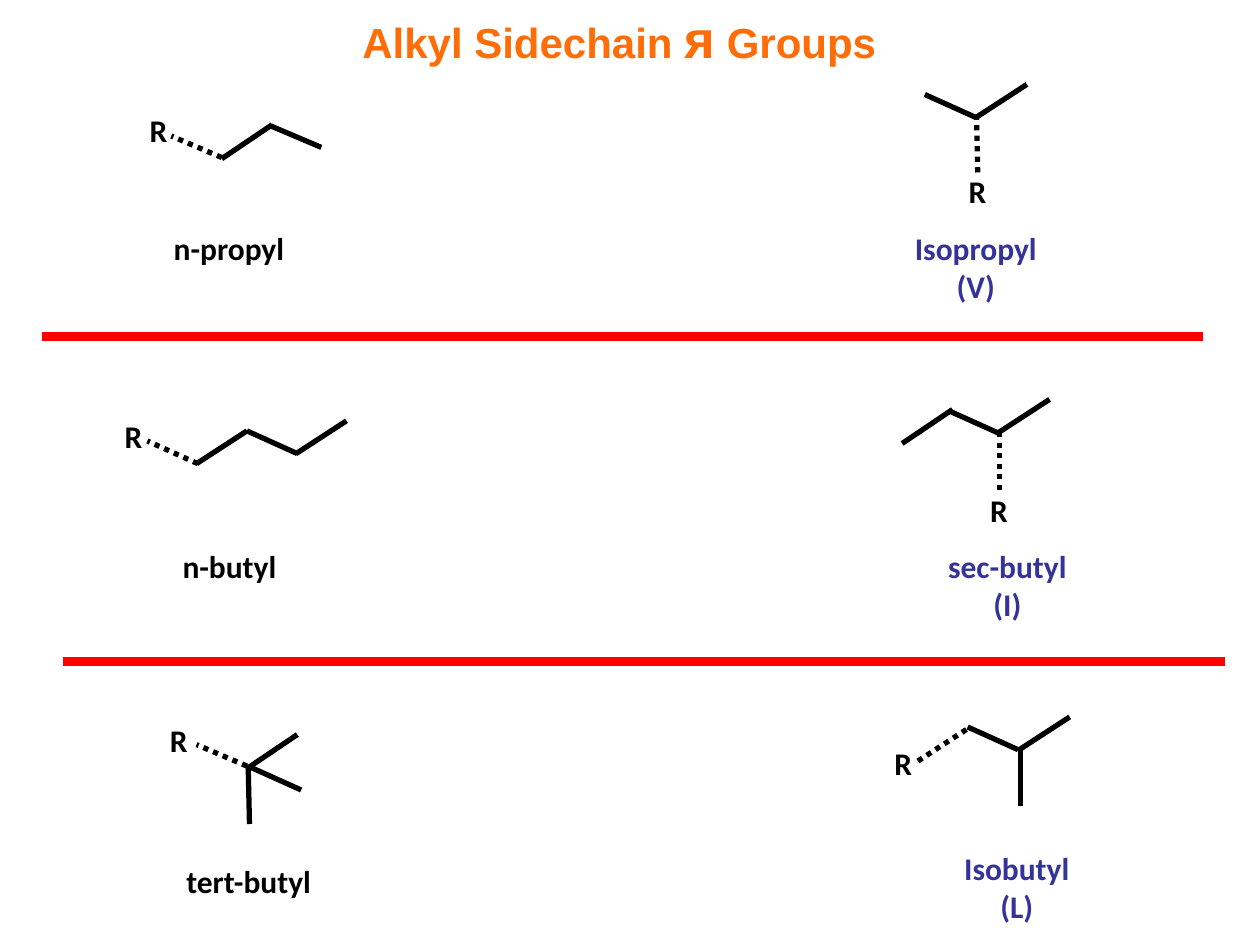
"""Build a slide of alkyl sidechain skeletal structures."""
from lxml import etree
from pptx import Presentation
from pptx.dml.color import RGBColor
from pptx.enum import dml, shapes, text
from pptx.oxml import ns
from pptx.util import Inches, Pt

BLACK, BLUE, RED, ORANGE = "000000", "333399", "FF0000", "FF6D09"


def add_line(container, points, color=BLACK, width=3, dash=None):
    line = container.add_connector(
        shapes.MSO_CONNECTOR.STRAIGHT, *[Inches(value) for value in points])
    line.line.color.rgb = RGBColor.from_string(color)
    line.line.width = Pt(width)
    if dash:
        line.line.dash_style = dash
    etree.SubElement(line._element.spPr, ns.qn("a:effectLst"))


def add_text(container, box, lines, color=BLACK, font="Calibri", size=18,
             align=text.PP_ALIGN.LEFT, wrap=False):
    frame = container.add_textbox(*[Inches(value) for value in box]).text_frame
    frame.word_wrap = wrap
    frame.auto_size = text.MSO_AUTO_SIZE.SHAPE_TO_FIT_TEXT
    frame.text = lines
    for paragraph in frame.paragraphs:
        paragraph.alignment = align
        paragraph.font.name = font
        paragraph.font.size = Pt(size)
        paragraph.font.bold = True
        paragraph.font.color.rgb = RGBColor.from_string(color)
    return frame


presentation = Presentation()
presentation.slide_width = Inches(10)
presentation.slide_height = Inches(7.5)
slide = presentation.slides.add_slide(presentation.slide_layouts[6])

title = add_text(slide.shapes, (1.75, 0, 6.25, 0.61), " Alkyl Sidechain ", ORANGE,
                 "Arial", 24, text.PP_ALIGN.CENTER, True).paragraphs[0]
for words, size in (("ᴙ", 30), (" Groups", 24)):
    run = title.add_run()
    run.text = words
    run.font.size = Pt(size)
    run.font.name = "Arial"
    run.font.bold = True
    run.font.color.rgb = RGBColor.from_string(ORANGE)

# Each molecule: R label corner, dotted bond to R, solid bonds
molecules = [
    ((7.59, 1.32), (7.75, 0.91, 7.76, 1.38),
     [(7.74, 0.93, 7.34, 0.75), (8.15, 0.67, 7.75, 0.93)]),
    ((1.09, 0.83), (1.76, 1.25, 1.36, 1.08),
     [(2.16, 0.99, 1.76, 1.26), (2.55, 1.17, 2.15, 1)]),
    ((0.89, 3.26), (1.57, 3.68, 1.17, 3.5),
     [(1.96, 3.42, 1.56, 3.68), (2.36, 3.6, 1.96, 3.42), (2.75, 3.34, 2.35, 3.6)]),
    ((7.76, 3.85), (7.93, 3.43, 7.93, 3.9),
     [(7.56, 3.25, 7.16, 3.52), (7.93, 3.44, 7.53, 3.26), (8.33, 3.17, 7.93, 3.43)]),
    ((1.25, 5.67), (1.96, 6.08, 1.56, 5.91),
     [(1.97, 6.08, 1.98, 6.54), (2.36, 5.83, 1.96, 6.1), (2.39, 6.27, 1.99, 6.09)]),
    ((7, 5.86), (7.67, 5.79, 7.27, 6.05),
     [(8.1, 5.93, 8.1, 6.4), (8.08, 5.95, 7.68, 5.77), (8.49, 5.69, 8.09, 5.95)]),
]
for corner, dotted_bond, solid_bonds in molecules:
    molecule = slide.shapes.add_group_shape().shapes
    add_line(molecule, dotted_bond, dash=dml.MSO_LINE.ROUND_DOT)
    for bond in solid_bonds:
        add_line(molecule, bond)
    add_text(molecule, (*corner, 0.34, 0.4), "R")

for left, top, width, name in [
    (1.28, 1.77, 1.08, "n-propyl"),
    (1.35, 4.29, 0.95, "n-butyl"),
    (1.38, 6.79, 1.21, "tert-butyl"),
]:
    add_text(slide.shapes, (left, top, width, 0.4), name)

for left, top, width, name in [
    (7.16, 1.77, 1.17, "Isopropyl\n(V)"),
    (7.42, 4.29, 1.15, "sec-butyl\n(I)"),
    (7.55, 6.69, 1.04, "Isobutyl\n(L)"),
]:
    add_text(slide.shapes, (left, top, width, 0.71), name, BLUE,
             align=text.PP_ALIGN.CENTER)

for left, top in ((0.33, 2.67), (0.5, 5.25)):
    add_line(slide.shapes, (left, top, left + 9.22, top), RED, 5)

presentation.save("out.pptx")
